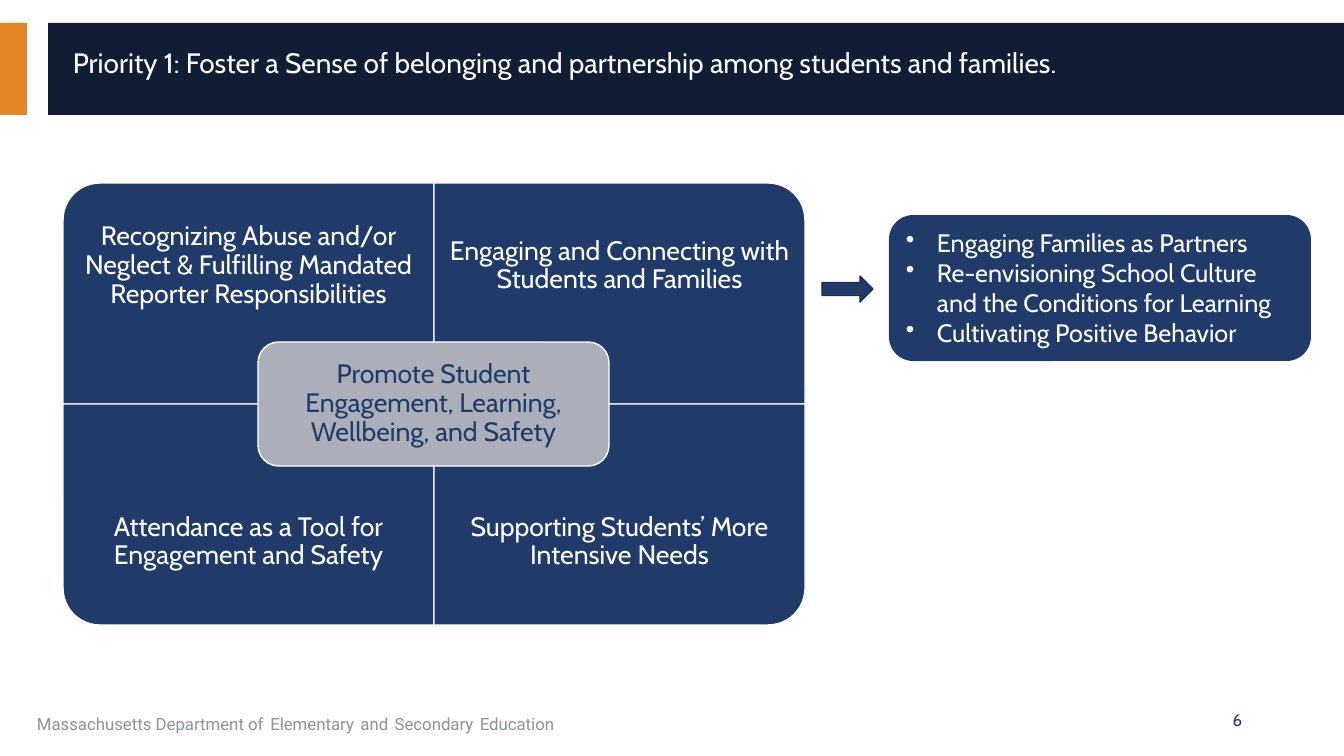
import pptx
import pptx.util
import pptx.dml.color
import pptx.enum.shapes
import pptx.enum.text
from lxml import etree

PX = 914400 / 100.8
SHAPE = pptx.enum.shapes.MSO_SHAPE
ALIGN = pptx.enum.text.PP_ALIGN
ANCHOR = pptx.enum.text.MSO_ANCHOR
THEME = {
    "font": "Cabin", "footer_font": "Roboto",
    "navy": "203B6A", "header": "101D35", "orange": "E38526", "white": "FFFFFF",
    "gray": "ACAFB9", "muted": "8D92A1", "arrow_line": "182C4E",
    "title": 20, "topic": 19, "list": 18, "small": 12, "line": 1,
}

prs = pptx.Presentation()
prs.slide_width, prs.slide_height = round(1344 * PX), round(756 * PX)
s = prs.slides.add_slide(prs.slide_layouts[6])


def add_box(box, fill=None, line=None, shape=SHAPE.RECTANGLE, rotation=0):
    """Add a text box, or a flat shape when a fill is given."""
    emu = [round(v * PX) for v in box]
    if fill is None:
        return s.shapes.add_textbox(*emu)
    sp = s.shapes.add_shape(shape, *emu)
    sp.shadow.inherit = False
    sp.rotation = rotation
    sp.fill.solid()
    sp.fill.fore_color.rgb = pptx.dml.color.RGBColor.from_string(THEME[fill])
    if line:
        sp.line.color.rgb = pptx.dml.color.RGBColor.from_string(THEME[line])
        sp.line.width = pptx.util.Pt(THEME["line"])
    else:
        sp.line.fill.background()
    return sp


def write(sp, paragraphs, size, color="white", font="font", align=ALIGN.LEFT,
          anchor=ANCHOR.MIDDLE, spacing=None, inset=None, bullet=False):
    """Fill a shape with paragraphs, each a list of (text, size) runs or a string."""
    tf = sp.text_frame
    frame = {"word_wrap": True, "vertical_anchor": anchor}
    if inset is not None:
        frame |= {"margin_" + side: round(inset * PX)
                  for side in ("left", "top", "right", "bottom")}
    for name, value in frame.items():
        setattr(tf, name, value)
    for i, runs in enumerate(paragraphs):
        p = tf.paragraphs[0] if i == 0 else tf.add_paragraph()
        p.alignment = align
        if spacing:
            p.line_spacing = spacing
        if bullet:
            pPr = p._p.get_or_add_pPr()
            pPr.set("marL", str(round(31 * PX)))
            pPr.set("indent", str(round(-31 * PX)))
            etree.SubElement(pPr, pptx.oxml.ns.qn("a:buChar")).set("char", "•")
        for text, run_size in [(runs, size)] if isinstance(runs, str) else runs:
            r = p.add_run()
            r.text = text
            for name, value in {"name": THEME[font],
                                "size": pptx.util.Pt(THEME[run_size])}.items():
                setattr(r.font, name, value)
            r.font.color.rgb = pptx.dml.color.RGBColor.from_string(THEME[color])


# Header band and title
add_box((0, 23, 27, 92), "orange")
add_box((48, 23, 1296, 92), "header")
title = add_box((63, 32, 1254, 116))
write(title, ["Priority 1: Foster a Sense of belonging and partnership "
              "among students and families."], "title", spacing=0.9)
title.text_frame.margin_bottom = round(57 * PX)

# Footer, with wider gaps between the words
words = ["Massachusetts Department of", "Elementary", "and", "Secondary", "Education"]
footer = [(words[0], "small")]
for word in words[1:]:
    footer += [(" ", "list"), (word, "small")]
write(add_box((27, 700, 851, 40)), [footer], "small", "muted", "footer_font",
      anchor=ANCHOR.TOP)

# Four quadrants: each rounds its outer corner
LEFT, TOP, WIDTH, HEIGHT, TEXT_HEIGHT = 63, 183, 371, 221, 166
topics = [
    ("Recognizing Abuse and/or Neglect & Fulfilling Mandated Reporter Responsibilities",
     0, 0, 270),
    ("Engaging and Connecting with Students and Families", 1, 0, 0),
    ("Attendance as a Tool for Engagement and Safety", 0, 1, 180),
    ("Supporting Students’ More Intensive Needs", 1, 1, 90),
]
for text, col, row, rotation in topics:
    x, y = LEFT + col * WIDTH, TOP + row * HEIGHT
    box = (x, y, WIDTH, HEIGHT)
    if rotation % 180:
        shift = (WIDTH - HEIGHT) / 2
        box = (x + shift, y - shift, HEIGHT, WIDTH)
    add_box(box, "navy", "white", SHAPE.ROUND_1_RECTANGLE, rotation)
    text_y = y + row * (HEIGHT - TEXT_HEIGHT)
    write(add_box((x, text_y, WIDTH, TEXT_HEIGHT)), [text], "topic",
          align=ALIGN.CENTER, spacing=0.9, inset=15)

# Shared goal in the centre
goal = add_box((258, 342, 351, 124), "gray", "white", SHAPE.ROUNDED_RECTANGLE)
write(goal, ["Promote Student Engagement, Learning, Wellbeing, and Safety"], "topic",
      "navy", align=ALIGN.CENTER, spacing=0.9, inset=8)

# Arrow and list of practices
add_box((822, 276, 51, 26), "navy", "arrow_line", SHAPE.RIGHT_ARROW)
practices = add_box((889, 215, 422, 146), "navy", shape=SHAPE.ROUNDED_RECTANGLE)
write(practices, ["Engaging Families as Partners",
                  "Re-envisioning School Culture and the Conditions for Learning",
                  "Cultivating Positive Behavior"],
      "list", anchor=ANCHOR.TOP, bullet=True)

# Page number
write(add_box((950, 700, 302, 40)), ["6"], "small", "navy", align=ALIGN.RIGHT)

prs.save("out.pptx")
